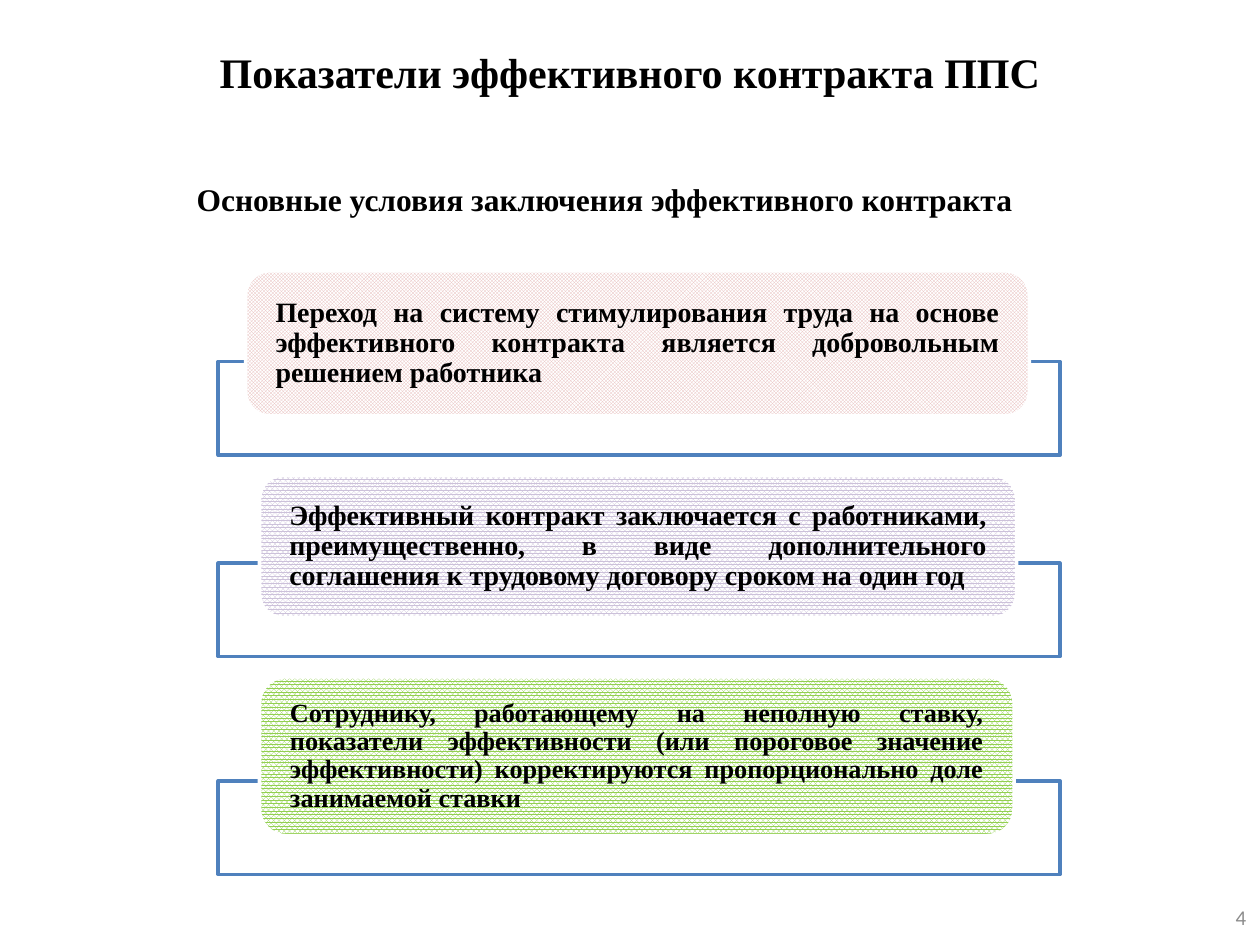
import pptx
import pptx.dml.color
import pptx.enum.dml
import pptx.enum.shapes
import pptx.enum.text
import pptx.util

Pt = pptx.util.Pt
RGBColor = pptx.dml.color.RGBColor
ALIGN = pptx.enum.text.PP_ALIGN
PATTERN = pptx.enum.dml.MSO_PATTERN
SHAPE = pptx.enum.shapes.MSO_SHAPE
MIDDLE = pptx.enum.text.MSO_ANCHOR.MIDDLE

BLACK = RGBColor(0x00, 0x00, 0x00)
WHITE = RGBColor(0xFF, 0xFF, 0xFF)
GRAY = RGBColor(0x8C, 0x8C, 0x8C)
BLUE = RGBColor(0x4F, 0x81, 0xBD)
PINK = RGBColor(0xE6, 0xB9, 0xB8)
LILAC = RGBColor(0xCC, 0xC1, 0xDA)
GREEN = RGBColor(0x92, 0xD0, 0x50)

SERIF_BOLD = {"name": "Times New Roman", "bold": True}
FRAME_LEFT, FRAME_WIDTH, FRAME_HEIGHT = 124.7, 481, 53.5


def write_text(shape, text, alignment, color, font_format):
    frame = shape.text_frame
    frame.word_wrap = True
    frame.vertical_anchor = MIDDLE
    para = frame.paragraphs[0]
    para.alignment = alignment
    span = para.add_run()
    span.text = text
    span.font.color.rgb = color
    for name, value in font_format.items():
        setattr(span.font, name, value)


def add_outlined(kind, left, top, width, height, line_color):
    shape = slide.shapes.add_shape(kind, Pt(left), Pt(top), Pt(width), Pt(height))
    shape.shadow.inherit = False
    shape.line.color.rgb = line_color
    shape.line.width = Pt(2)
    return shape


deck = pptx.Presentation()
deck.slide_width, deck.slide_height = Pt(720), Pt(540)
slide = deck.slides.add_slide(deck.slide_layouts[6])

# Title, page number and subtitle
labels = [
    ((36, 21.6, 648, 38.2), "Показатели эффективного контракта ППС",
     ALIGN.CENTER, BLACK, {**SERIF_BOLD, "size": Pt(24)}),
    ((551.5, 509.8, 167.8, 28.8), "4",
     ALIGN.RIGHT, GRAY, {"name": "Calibri", "size": Pt(12)}),
    ((69.8, 99.4, 551.5, 29), "Основные условия заключения эффективного контракта",
     ALIGN.CENTER, BLACK, {**SERIF_BOLD, "size": Pt(18)}),
]
for place, text, alignment, color, font_format in labels:
    box = slide.shapes.add_textbox(*map(Pt, place))
    write_text(box, text, alignment, color, font_format)

# Conditions: a frame with a patterned card over its upper edge
conditions = [
    (206.6, (140.4, 154.8, 447.8, 82.8), PATTERN.SMALL_CHECKER_BOARD, PINK, 16,
     "Переход на систему стимулирования труда на основе эффективного "
     "контракта является добровольным решением работника"),
    (321.8, (148.3, 271.6, 432.6, 81.4), PATTERN.PERCENT_80, LILAC, 16,
     "Эффективный контракт заключается с работниками, преимущественно, в виде "
     "дополнительного соглашения к трудовому договору сроком на один год"),
    (446.2, (148.3, 386.8, 431.2, 90.7), PATTERN.PERCENT_80, GREEN, 15,
     "Сотруднику, работающему на неполную ставку, показатели эффективности "
     "(или пороговое значение эффективности) корректируются пропорционально "
     "доле занимаемой ставки"),
]
card_margins = {"margin_left": Pt(13), "margin_right": Pt(13),
                "margin_top": 0, "margin_bottom": 0}
for frame_top, place, pattern, color, size, text in conditions:
    outline = add_outlined(SHAPE.RECTANGLE, FRAME_LEFT, frame_top,
                           FRAME_WIDTH, FRAME_HEIGHT, BLUE)
    outline.fill.solid()
    outline.fill.fore_color.rgb = WHITE

    card = add_outlined(SHAPE.ROUNDED_RECTANGLE, *place, WHITE)
    card.fill.patterned()
    card.fill.pattern = pattern
    card.fill.fore_color.rgb = color
    card.fill.back_color.rgb = WHITE
    for name, value in card_margins.items():
        setattr(card.text_frame, name, value)
    write_text(card, text, ALIGN.JUSTIFY, BLACK, {**SERIF_BOLD, "size": Pt(size)})
    card.text_frame.paragraphs[0].line_spacing = 0.9

deck.save("out.pptx")
